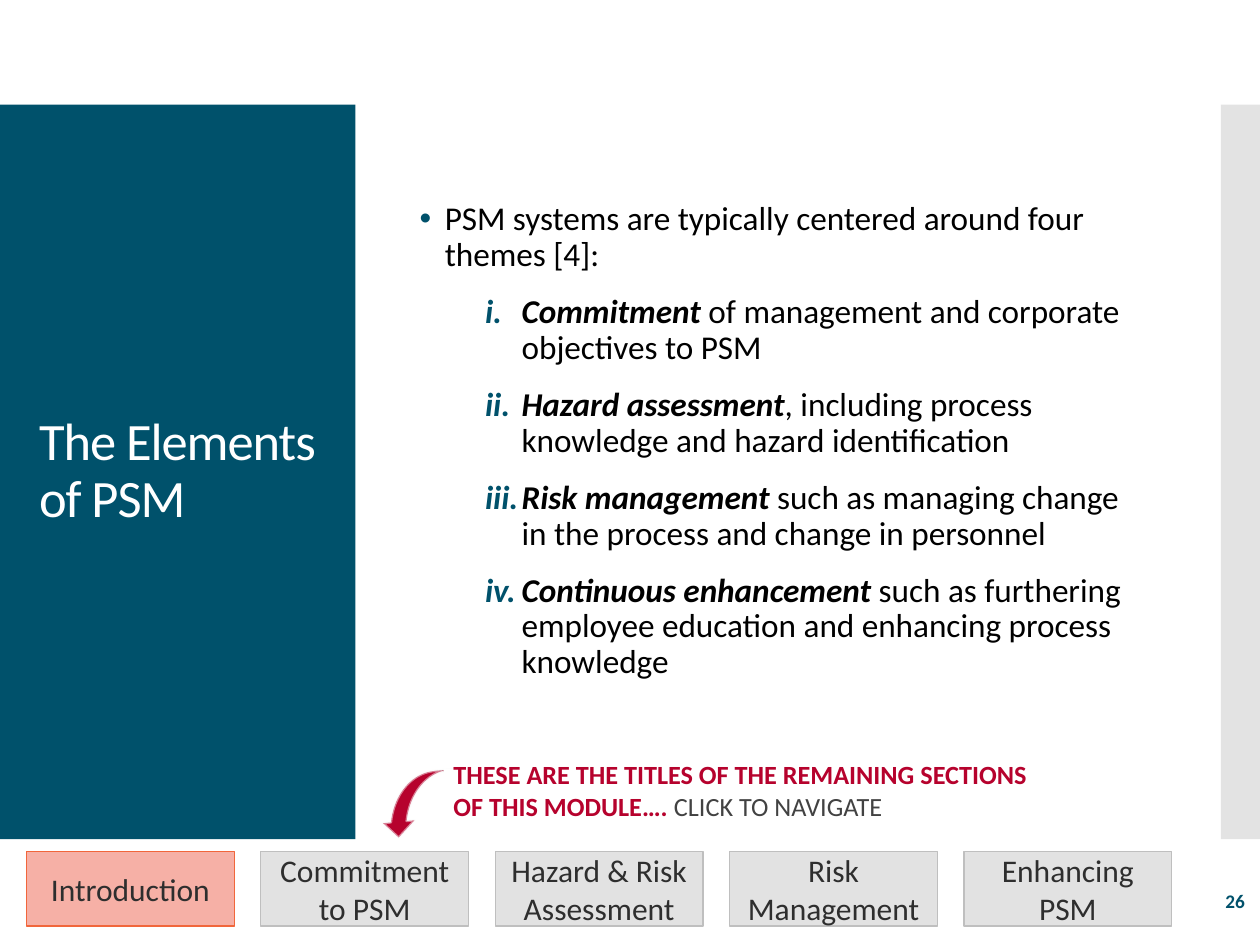
from lxml.etree import SubElement
from pptx import Presentation
from pptx.dml.color import RGBColor
from pptx.enum.shapes import MSO_SHAPE
from pptx.enum.text import MSO_ANCHOR, MSO_AUTO_SIZE, PP_ALIGN
from pptx.oxml.ns import qn
from pptx.util import Inches, Pt

TEAL = RGBColor(0x00, 0x51, 0x6B)
SILVER = RGBColor(0xC8, 0xC8, 0xC8)
CRIMSON = RGBColor(0xB6, 0x02, 0x2D)
PALE = RGBColor(0xF9, 0xF9, 0xF9)
WHITE = RGBColor(0xFF, 0xFF, 0xFF)
BLACK = RGBColor(0x00, 0x00, 0x00)
SLATE = RGBColor(0x42, 0x42, 0x42)
INK = RGBColor(0x2E, 0x2E, 0x2E)
PINK = RGBColor(0xF6, 0xB0, 0xA6)
CORAL = RGBColor(0xF1, 0x66, 0x3B)
GREY = RGBColor(0xD9, 0xD9, 0xD9)
EDGE = RGBColor(0xBF, 0xBF, 0xBF)

THEMES = [
    ("Commitment ", "of management and corporate objectives to PSM"),
    ("Hazard assessment", ", including process knowledge and hazard identification"),
    ("Risk management", " such as managing change in the process and change in personnel"),
    ("Continuous enhancement",
     " such as furthering employee education and enhancing process knowledge"),
]
TABS = ["Introduction", "Commitment to PSM", "Hazard & Risk Assessment",
        "Risk Management", "Enhancing PSM"]


def write(para, text, size=18, color=INK, bold=False, slant=False, track=None, align=None):
    run = para.add_run()
    run.text = text
    font = run.font
    font.name, font.size = "Calibri", Pt(size)
    font.bold, font.italic = bold, slant
    font.color.rgb = color
    if track is not None:
        run.font._element.set("spc", str(track))
    if align is not None:
        para.alignment = align


def fade(fill, share):
    tint = fill._xPr.find(qn("a:solidFill"))[0]
    SubElement(tint, qn("a:alpha"), val=str(share * 1000))


def draw(slide, box, fill, kind=MSO_SHAPE.RECTANGLE, alpha=None, line=None, width=0.75):
    shape = slide.shapes.add_shape(kind, *map(Inches, box))
    shape.shadow.inherit = False
    shape.fill.solid()
    shape.fill.fore_color.rgb = fill
    if alpha:
        fade(shape.fill, alpha)
    if line is None:
        shape.line.fill.background()
    else:
        shape.line.color.rgb = line
        shape.line.width = Pt(width)
    return shape


def place(shape, box):
    shape.left, shape.top, shape.width, shape.height = map(Inches, box)


def frame(shape, anchor=MSO_ANCHOR.MIDDLE):
    text = shape.text_frame
    text.word_wrap = True
    text.auto_size = MSO_AUTO_SIZE.NONE
    text.vertical_anchor = anchor
    return text


def label(slide, box, anchor=MSO_ANCHOR.MIDDLE):
    return frame(slide.shapes.add_textbox(*map(Inches, box)), anchor).paragraphs[0]


def bullet(para, indent, hang, font, tag, **mark):
    para.line_spacing = 0.9
    para.space_before = Pt(12)
    para.space_after = Pt(0)
    props = para._p.get_or_add_pPr()
    props.set("marL", str(Inches(indent)))
    props.set("indent", str(-Inches(hang)))
    tint = SubElement(props, qn("a:buClr"))
    SubElement(tint, qn("a:srgbClr"), val=str(TEAL))
    SubElement(props, qn("a:buFont"), typeface=font)
    SubElement(props, qn(tag), **mark)


def panels(slide):
    tree = slide.shapes._spTree
    sides = [draw(slide, (0, 0.83, 2.82, 5.83), TEAL),
             draw(slide, (9.69, 0.83, 0.31, 5.83), SILVER, alpha=50)]
    for spot, shape in enumerate(sides, 2):
        tree.insert(spot, shape.element)


def arrow(slide):
    shape = draw(slide, (3.25, 5.88, 0.5, 0.97), CRIMSON,
                 kind=MSO_SHAPE.CURVED_LEFT_ARROW, line=PALE, width=1.35)
    fade(shape.line.fill, 50)
    for spot, value in enumerate((0.25, 0.5, 0.25)):
        shape.adjustments[spot] = value
    shape.rotation = 84.7
    shape.element.spPr.find(qn("a:xfrm")).set("flipH", "1")
    draw(slide, (3.52, 6.1, 0.75, 0.52), WHITE)


def title(slide):
    shape = slide.shapes.title
    place(shape, (0.21, 1.23, 2.42, 5.03))
    para = frame(shape).paragraphs[0]
    para.line_spacing = 0.9
    write(para, "The Elements of PSM", size=30, color=WHITE, track=-60, align=PP_ALIGN.LEFT)


def body(slide):
    shape = slide.placeholders[1]
    place(shape, (3.23, 1.23, 6, 4.55))
    text = frame(shape)
    para = text.paragraphs[0]
    bullet(para, 0.2, 0.2, "Arial", "a:buChar", char="•")
    write(para, "PSM systems are typically centered around four themes [4]:",
          size=19, color=BLACK)
    for name, rest in THEMES:
        para = text.add_paragraph()
        para.level = 1
        bullet(para, 0.81, 0.29, "Calibri", "a:buAutoNum", type="romanLcPeriod")
        write(para, name, size=19, color=BLACK, bold=True, slant=True)
        write(para, rest, size=19, color=BLACK)


def notice(slide):
    para = label(slide, (3.5, 5.97, 4.95, 0.61), MSO_ANCHOR.TOP)
    write(para, "THESE ARE THE TITLES OF THE REMAINING SECTIONS OF THIS MODULE…. ",
          size=15, color=CRIMSON, bold=True)
    write(para, "CLICK TO NAVIGATE", size=15, color=SLATE)


def tabs(slide):
    for spot, name in enumerate(TABS):
        look = dict(fill=GREY, alpha=75, line=EDGE) if spot else dict(fill=PINK, line=CORAL)
        shape = draw(slide, (0.21 + 1.86 * spot, 6.76, 1.65, 0.59), **look)
        write(frame(shape).paragraphs[0], name, align=PP_ALIGN.CENTER)


def main():
    deck = Presentation()
    deck.slide_width, deck.slide_height = Inches(10), Inches(7.5)
    slide = deck.slides.add_slide(deck.slide_layouts[1])
    panels(slide)
    arrow(slide)
    title(slide)
    body(slide)
    write(label(slide, (8.72, 6.95, 1.26, 0.4)), "26", size=11, color=TEAL,
          bold=True, align=PP_ALIGN.RIGHT)
    notice(slide)
    tabs(slide)
    deck.save("out.pptx")


if __name__ == "__main__":
    main()
